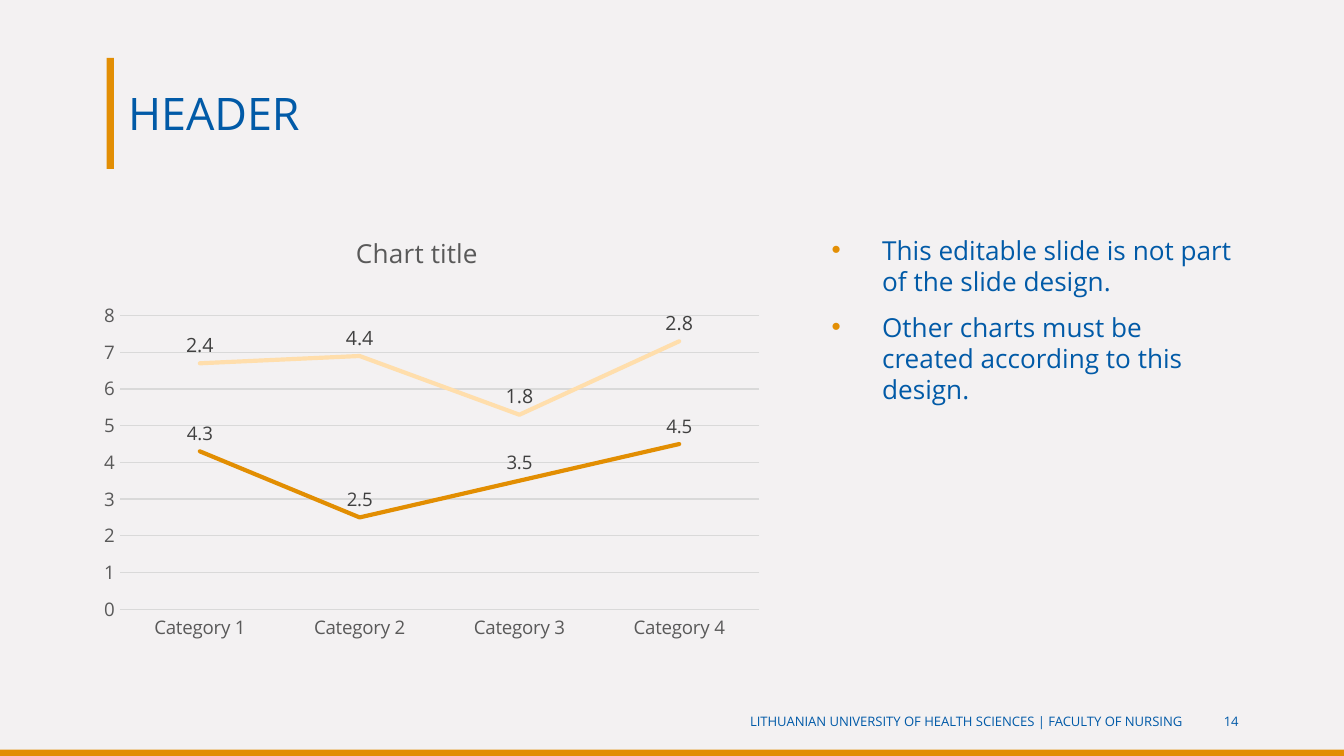
"""Build a slide with a stacked line chart beside two bullet points."""
from dataclasses import dataclass

import pptx
import pptx.chart.data
import pptx.dml.color
import pptx.enum.chart
import pptx.enum.shapes
import pptx.enum.text
import pptx.oxml
import pptx.oxml.ns
import pptx.util

WIDTH = pptx.util.Inches(10)
HEIGHT = WIDTH * 9 // 16
FONT = "Open Sans"
COLORS = {
    "background": "F3F1F2", "accent": "E28E04", "bullet": "E38F05",
    "text": "015AA7", "footer": "015AA8", "axis": "595959",
    "grid": "D9D9D9", "label": "404040", "dark": "E28E02", "light": "FFDEAC",
}
NAMESPACES = pptx.oxml.ns.nsdecls("a", "c")
POINTS = (
    "This editable slide is not part of the slide design.",
    "Other charts must be created according to this design.",
)


@dataclass(frozen=True)
class Box:
    """An area given as percentages of the slide's size."""
    left: float
    top: float
    width: float
    height: float

    def emu(self) -> tuple[int, int, int, int]:
        """Return left, top, width and height in EMU."""
        return (round(self.left * WIDTH / 100), round(self.top * HEIGHT / 100),
                round(self.width * WIDTH / 100), round(self.height * HEIGHT / 100))


@dataclass(frozen=True)
class Series:
    """One line of the chart."""
    name: str
    values: tuple[float, ...]
    color: str
    label_size: float


@dataclass(frozen=True)
class Footer:
    """One right-aligned text at the foot of the slide."""
    text: str
    left: float
    width: float


BARS = (Box(0, 99.15, 100, 0.85), Box(7.93, 7.66, 0.55, 14.7))
HEADER = Box(8.53, 7.6, 84.6, 14.7)
CHART = Box(6.9, 30.1, 50.6, 55.5)
BODY = Box(60.9, 30.1, 32.3, 55.5)
FOOTER_TOP, FOOTER_HEIGHT = 92.7, 5.3
FOOTERS = (
    Footer("LITHUANIAN UNIVERSITY OF HEALTH SCIENCES | FACULTY OF NURSING", 16.8, 72.15),
    Footer("14", 89.6, 3.55),
)
CATEGORIES = tuple(f"Category {number}" for number in range(1, 5))
SERIES = (
    Series("Series 1", (4.3, 2.5, 3.5, 4.5), "dark", 10),
    Series("Series 2", (2.4, 4.4, 1.8, 2.8), "light", 10.5),
)


def rgb(name: str) -> pptx.dml.color.RGBColor:
    """Look up a named colour."""
    return pptx.dml.color.RGBColor.from_string(COLORS[name])


def style_font(font, size: float, color: str) -> None:
    """Set the face, size and colour of a font."""
    font.name, font.size, font.bold = FONT, pptx.util.Pt(size), False
    font.color.rgb = rgb(color)


def style_line(line, color: str, width: float) -> None:
    """Set the colour and width of a line."""
    line.color.rgb = rgb(color)
    line.width = pptx.util.Pt(width)


def draw_bar(slide, box: Box) -> None:
    """Draw a plain accent bar."""
    bar = slide.shapes.add_shape(pptx.enum.shapes.MSO_SHAPE.RECTANGLE, *box.emu())
    bar.shadow.inherit = False
    bar.fill.solid()
    bar.fill.fore_color.rgb = rgb("accent")
    bar.line.fill.background()


def draw_header(slide) -> None:
    """Place and format the title."""
    title = slide.shapes.title
    title.left, title.top, title.width, title.height = HEADER.emu()
    title.text_frame.text = "HEADER"
    title.text_frame.vertical_anchor = pptx.enum.text.MSO_ANCHOR.MIDDLE
    heading = title.text_frame.paragraphs[0]
    heading.alignment = pptx.enum.text.PP_ALIGN.LEFT
    style_font(heading.runs[0].font, 24, "text")


def draw_points(slide) -> None:
    """Write the bulleted points."""
    frame = slide.shapes.add_textbox(*BODY.emu()).text_frame
    frame.word_wrap = True
    frame.text = "\n".join(POINTS)
    for index, point in enumerate(frame.paragraphs):
        point.space_before = pptx.util.Pt(7.5 if index else 0)
        properties = point._p.get_or_add_pPr()
        indent = pptx.util.Inches(0.375)
        properties.set("marL", str(indent))
        properties.set("indent", str(-indent))
        for bullet in (f'<a:buClr {NAMESPACES}><a:srgbClr val="{COLORS["bullet"]}"/></a:buClr>',
                       f'<a:buFont {NAMESPACES} typeface="Arial"/>',
                       f'<a:buChar {NAMESPACES} char="•"/>'):
            properties.append(pptx.oxml.parse_xml(bullet))
        style_font(point.runs[0].font, 14, "text")


def draw_footer(slide, footer: Footer) -> None:
    """Write one footer text."""
    box = Box(footer.left, FOOTER_TOP, footer.width, FOOTER_HEIGHT)
    frame = slide.shapes.add_textbox(*box.emu()).text_frame
    frame.word_wrap = True
    frame.vertical_anchor = pptx.enum.text.MSO_ANCHOR.MIDDLE
    frame.text = footer.text
    frame.paragraphs[0].alignment = pptx.enum.text.PP_ALIGN.RIGHT
    style_font(frame.paragraphs[0].runs[0].font, 7, "footer")


def set_layout(parent, position: int, **settings: str | float) -> None:
    """Give a part of the chart a manual layout."""
    for old in parent.findall(pptx.oxml.ns.qn("c:layout")):
        parent.remove(old)
    parts = "".join(f'<c:{name} val="{value}"/>' for name, value in settings.items())
    parent.insert(position, pptx.oxml.parse_xml(
        f"<c:layout {NAMESPACES}><c:manualLayout>{parts}</c:manualLayout></c:layout>"))


def draw_chart(slide) -> None:
    """Draw the stacked line chart."""
    data = pptx.chart.data.CategoryChartData()
    data.categories = CATEGORIES
    for series in SERIES:
        data.add_series(series.name, series.values)
    chart = slide.shapes.add_chart(
        pptx.enum.chart.XL_CHART_TYPE.LINE_STACKED, *CHART.emu(), data).chart
    style_font(chart.font, 10, "axis")
    chart.has_legend = False
    chart.has_title = True
    chart.chart_title.text_frame.text = "Chart title"
    style_font(chart.chart_title.text_frame.paragraphs[0].runs[0].font, 14, "axis")
    set_layout(chart.chart_title._element, 1, xMode="edge", yMode="edge", x=0.38, y=0)
    set_layout(chart._chartSpace.chart.plotArea, 0, layoutTarget="inner",
               xMode="edge", yMode="edge", x=0.04, y=0.21, w=0.94, h=0.7)
    for axis in (chart.category_axis, chart.value_axis):
        axis.major_tick_mark = axis.minor_tick_mark = pptx.enum.chart.XL_TICK_MARK.NONE
        style_font(axis.tick_labels.font, 10, "axis")
    style_line(chart.category_axis.format.line, "grid", 0.75)
    values = chart.value_axis
    values.minimum_scale, values.maximum_scale, values.major_unit = 0, 8, 1
    values.format.line.fill.background()
    style_line(values.major_gridlines.format.line, "grid", 0.75)
    chart.plots[0].vary_by_categories = False
    for drawn, series in zip(chart.plots[0].series, SERIES):
        drawn.smooth = False
        drawn.marker.style = pptx.enum.chart.XL_MARKER_STYLE.NONE
        style_line(drawn.format.line, series.color, 2.25)
        drawn.format.line._ln.set("cap", "rnd")
        labels = drawn.data_labels
        labels.show_value = True
        labels.position = pptx.enum.chart.XL_LABEL_POSITION.ABOVE
        style_font(labels.font, series.label_size, "label")


def main() -> None:
    """Build and save the presentation."""
    deck = pptx.Presentation()
    deck.slide_width, deck.slide_height = WIDTH, HEIGHT
    slide = deck.slides.add_slide(deck.slide_layouts.get_by_name("Title Only"))
    slide.background.fill.solid()
    slide.background.fill.fore_color.rgb = rgb("background")
    for bar in BARS:
        draw_bar(slide, bar)
    draw_header(slide)
    draw_chart(slide)
    draw_points(slide)
    for footer in FOOTERS:
        draw_footer(slide, footer)
    deck.save("out.pptx")


if __name__ == "__main__":
    main()
